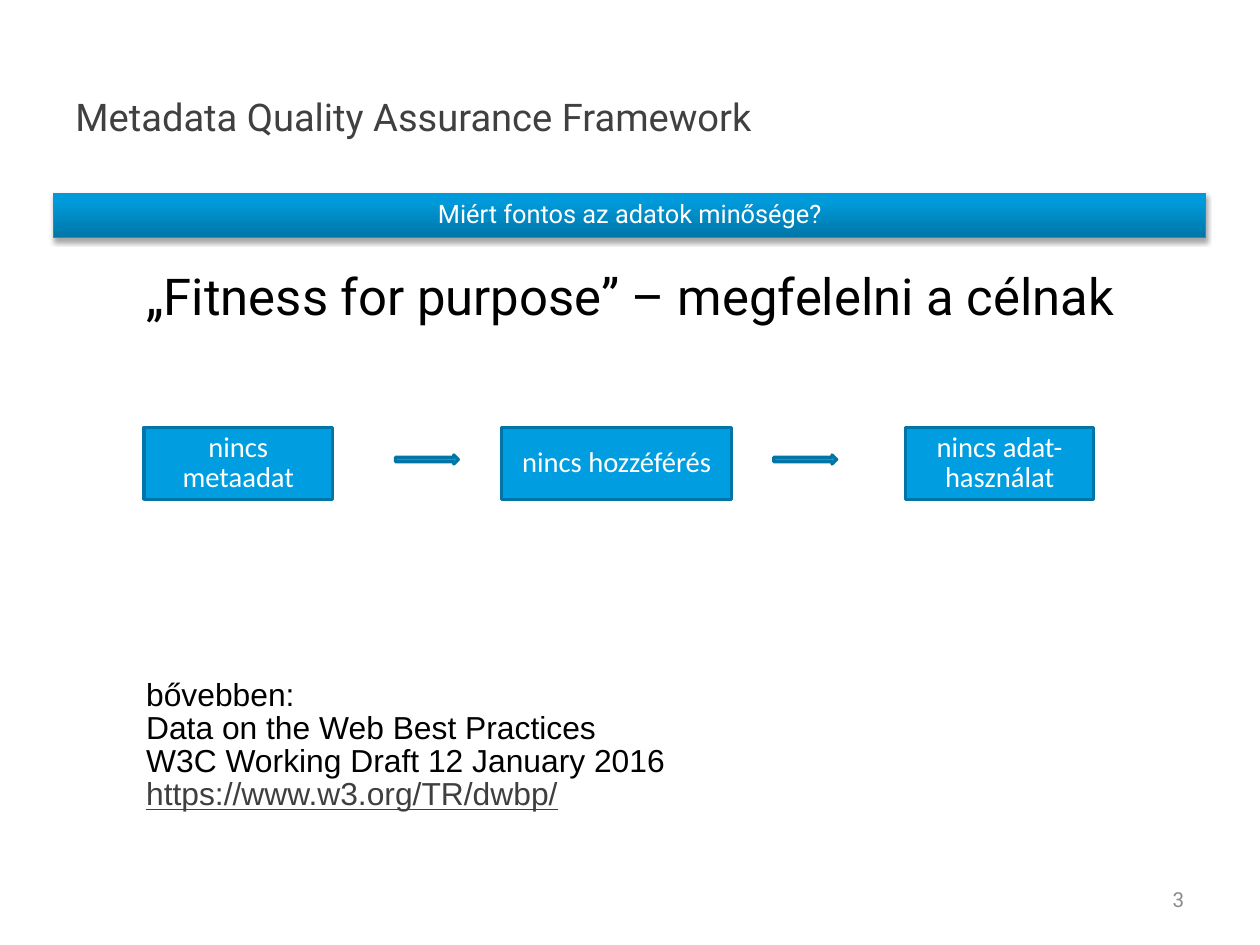
from copy import deepcopy
from dataclasses import dataclass

from lxml.etree import SubElement
from pptx import Presentation
from pptx.dml.color import RGBColor
from pptx.enum.shapes import MSO_SHAPE
from pptx.enum.text import MSO_ANCHOR, MSO_AUTO_SIZE, PP_ALIGN
from pptx.oxml.ns import qn
from pptx.shapes.autoshape import Shape
from pptx.slide import Slide
from pptx.text.text import TextFrame
from pptx.util import Emu, Inches, Pt


@dataclass(frozen=True)
class Theme:
    heading_font: str = "Roboto"
    step_font: str = "Calibri"
    source_font: str = "Arial"
    title_size: float = 24
    question_size: float = 16
    claim_size: float = 32
    step_size: float = 18
    source_size: float = 20
    number_size: float = 13
    title_ink: str = "404040"
    link_ink: str = "3F3F3F"
    number_ink: str = "8C8C8C"
    black: str = "000000"
    white: str = "FFFFFF"
    blue: str = "009EE0"
    blue_edge: str = "0075A6"
    banner_edge: str = "009BDB"
    banner_stops: tuple[tuple[float, str], ...] = ((0, "0076A7"), (0.8, "0099D9"), (1, "009ADA"))
    line_spacing: float = 0.87


@dataclass(frozen=True)
class Box:
    left: float
    top: float
    width: float
    height: float

    def lengths(self) -> tuple[Emu, Emu, Emu, Emu]:
        return Inches(self.left), Inches(self.top), Inches(self.width), Inches(self.height)


@dataclass(frozen=True)
class Step:
    text: str
    left: float
    width: float


THEME = Theme()
CM_PER_INCH = 2.54
STEP_TOP, STEP_HEIGHT = 3.74, 0.63
STEPS = (
    Step("nincs metaadat", 1.26, 1.65),
    Step("nincs hozzéférés", 4.39, 2.01),
    Step("nincs adat- használat", 7.92, 1.65),
)
ARROW_LEFTS = (3.46, 6.77)
SOURCE_LINES = (
    "bővebben:\vData on the Web Best Practices",
    "W3C Working Draft 12 January 2016",
    "https://www.w3.org/TR/dwbp/",
)


def place(shape: Shape, box: Box) -> None:
    shape.left, shape.top, shape.width, shape.height = box.lengths()


def write(frame: TextFrame, text: str, font: str, size: float, ink: str,
          align: PP_ALIGN = PP_ALIGN.LEFT, spacing: float = 1.0,
          anchor: MSO_ANCHOR = MSO_ANCHOR.TOP) -> None:
    frame.text = text
    frame.word_wrap = True
    frame.auto_size = MSO_AUTO_SIZE.NONE
    frame.vertical_anchor = anchor
    for paragraph in frame.paragraphs:
        paragraph.alignment = align
        paragraph.line_spacing = spacing
        paragraph.space_before = Pt(0)
        for run in paragraph.runs:
            run.font.name = font
            run.font.size = Pt(size)
            run.font.color.rgb = RGBColor.from_string(ink)


def pad(frame: TextFrame) -> None:
    frame.margin_left = frame.margin_right = Inches(0.11)
    frame.margin_top = frame.margin_bottom = Inches(0.06)


def add_block(slide: Slide, preset: MSO_SHAPE, box: Box, edge: str, weight: float) -> Shape:
    block = slide.shapes.add_shape(preset, *box.lengths())
    block.fill.solid()
    block.fill.fore_color.rgb = RGBColor.from_string(THEME.blue)
    block.line.color.rgb = RGBColor.from_string(edge)
    block.line.width = Pt(weight)
    block.shadow.inherit = False
    return block


def add_banner(slide: Slide, text: str, box: Box) -> None:
    banner = add_block(slide, MSO_SHAPE.RECTANGLE, box, THEME.banner_edge, 0.75)
    banner.fill.gradient()
    banner.fill.gradient_angle = 90
    properties = banner._element.spPr
    stops = properties.find(".//" + qn("a:gsLst"))
    stops.append(deepcopy(stops[-1]))
    for stop, (position, ink) in zip(banner.fill.gradient_stops, THEME.banner_stops):
        stop.position = position
        stop.color.rgb = RGBColor.from_string(ink)
    shadow = SubElement(properties.find(qn("a:effectLst")), qn("a:outerShdw"),
                        blurRad=str(Pt(3.1)), dist=str(Pt(1.8)), dir="5400000", rotWithShape="0")
    shade = SubElement(shadow, qn("a:srgbClr"), val=THEME.black)
    SubElement(shade, qn("a:alpha"), val="35000")
    write(banner.text_frame, text, THEME.heading_font, THEME.question_size, THEME.white,
          PP_ALIGN.CENTER, THEME.line_spacing, MSO_ANCHOR.MIDDLE)


def add_step(slide: Slide, step: Step) -> None:
    box = Box(step.left, STEP_TOP, step.width, STEP_HEIGHT)
    block = add_block(slide, MSO_SHAPE.RECTANGLE, box, THEME.blue_edge, 2)
    write(block.text_frame, step.text, THEME.step_font, THEME.step_size, THEME.white,
          PP_ALIGN.CENTER, THEME.line_spacing, MSO_ANCHOR.MIDDLE)


def main() -> None:
    deck = Presentation()
    deck.slide_width = Inches(28 / CM_PER_INCH)
    deck.slide_height = Inches(21 / CM_PER_INCH)
    slide = deck.slides.add_slide(deck.slide_layouts[1])
    title, claim = slide.placeholders

    place(title, Box(0.55, 0.33, 6.96, 1.38))
    write(title.text_frame, "Metadata Quality Assurance Framework", THEME.heading_font,
          THEME.title_size, THEME.title_ink, anchor=MSO_ANCHOR.MIDDLE)
    pad(title.text_frame)

    number = slide.shapes.add_textbox(*Box(7.9, 7.65, 2.57, 0.44).lengths()).text_frame
    write(number, "3", THEME.heading_font, THEME.number_size, THEME.number_ink,
          PP_ALIGN.RIGHT, anchor=MSO_ANCHOR.MIDDLE)
    pad(number)

    add_banner(slide, "Miért fontos az adatok minősége?", Box(0.47, 1.69, 10.08, 0.39))

    place(claim, Box(0.71, 2.34, 9.61, 5.02))
    write(claim.text_frame, "„Fitness for purpose” – megfelelni a célnak", THEME.heading_font,
          THEME.claim_size, THEME.black, spacing=THEME.line_spacing)
    indents = claim.text_frame.paragraphs[0]._p.get_or_add_pPr()
    indents.set("marL", str(Inches(0.47)))
    indents.set("indent", "0")
    SubElement(indents, qn("a:buNone"))

    for step in STEPS:
        add_step(slide, step)
    for left in ARROW_LEFTS:
        add_block(slide, MSO_SHAPE.RIGHT_ARROW, Box(left, 3.98, 0.55, 0.08), THEME.blue_edge, 2)

    source = slide.shapes.add_textbox(*Box(1.18, 5.9, 8.32, 1.27).lengths()).text_frame
    write(source, "\n".join(SOURCE_LINES), THEME.source_font, THEME.source_size, THEME.black,
          spacing=THEME.line_spacing)
    link = source.paragraphs[-1].runs[0].font
    link.color.rgb = RGBColor.from_string(THEME.link_ink)
    link.underline = True

    deck.save("out.pptx")


if __name__ == "__main__":
    main()
